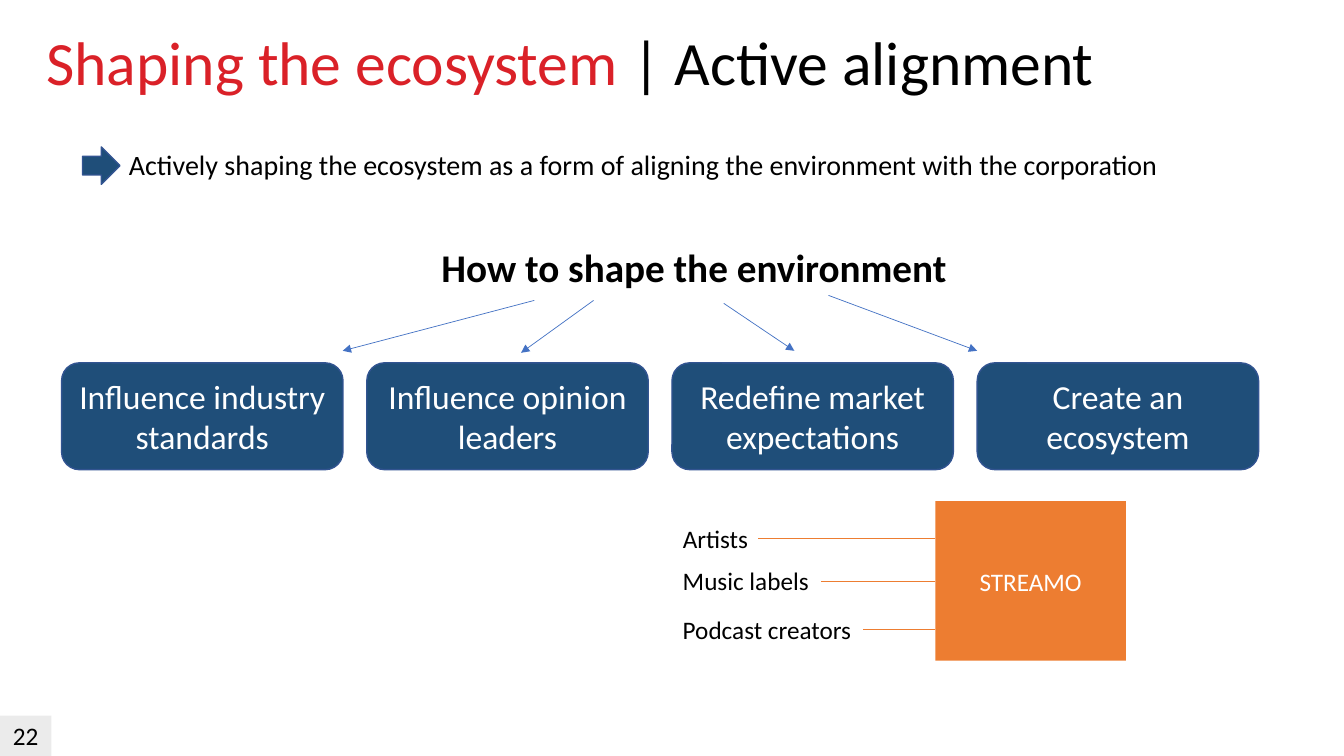
from dataclasses import dataclass

import lxml.etree
import pptx
import pptx.dml.color
import pptx.enum.shapes
import pptx.enum.text
import pptx.oxml.ns
import pptx.util

Pt = pptx.util.Pt
Shape = pptx.enum.shapes.MSO_SHAPE
Align = pptx.enum.text.PP_ALIGN
Anchor = pptx.enum.text.MSO_ANCHOR
qn = pptx.oxml.ns.qn

COLORS = {
    "red": "DA2128",
    "black": "000000",
    "white": "FFFFFF",
    "gray": "BFBFBF",
    "navy": "1F4E79",
    "outline": "325491",
    "blue": "4472C4",
    "orange": "ED7D31",
}


@dataclass(frozen=True)
class Frame:
    left: float
    top: float
    width: float
    height: float

    def lengths(self) -> list:
        return [Pt(value) for value in (self.left, self.top, self.width, self.height)]


@dataclass(frozen=True)
class Piece:
    text: str
    size: float
    color: str = "black"
    bold: bool = False


@dataclass(frozen=True)
class Action:
    text: str
    arrow_start: tuple
    arrow_end: tuple


@dataclass(frozen=True)
class Partner:
    text: str
    top: float
    width: float


ACTIONS = [
    Action("Influence industry standards", (381.6, 214.6), (244.8, 250.6)),
    Action("Influence opinion leaders", (424, 214.6), (372.2, 252)),
    Action("Redefine market expectations", (517, 216.7), (567.4, 250.6)),
    Action("Create an ecosystem", (591.8, 211), (698, 250.6)),
]
PARTNERS = [
    Partner("Artists", 370, 61.2),
    Partner("Music labels", 400.5, 105.8),
    Partner("Podcast creators", 435, 136),
]
ACTION_LEFT, ACTION_TOP, ACTION_PITCH = 44, 259.2, 218
HUB = Frame(668.2, 358, 136, 114)
HUB_MIDDLE = HUB.top + HUB.height / 2


def rgb(name: str):
    return pptx.dml.color.RGBColor.from_string(COLORS[name])


def write(box, pieces: list[Piece]):
    para = box.text_frame.paragraphs[0]
    for piece in pieces:
        span = para.add_run()
        span.text = piece.text
        span.font.name = "Calibri"
        span.font.size = Pt(piece.size)
        span.font.bold = piece.bold
        span.font.color.rgb = rgb(piece.color)
    return para


def add_text(page, frame: Frame, pieces: list[Piece], wrap: bool = False):
    box = page.shapes.add_textbox(*frame.lengths())
    box.text_frame.word_wrap = wrap
    write(box, pieces)
    return box


def add_block(page, kind, frame: Frame, fill: str, outline: str = "", pieces: list[Piece] = ()):
    block = page.shapes.add_shape(kind, *frame.lengths())
    block.shadow.inherit = False
    block.fill.solid()
    block.fill.fore_color.rgb = rgb(fill)
    if outline:
        block.line.color.rgb = rgb(outline)
        block.line.width = Pt(1)
    else:
        block.line.fill.background()
    block.text_frame.vertical_anchor = Anchor.MIDDLE
    write(block, pieces).alignment = Align.CENTER
    return block


def add_line(page, start: tuple, end: tuple, color: str):
    line = page.shapes.add_connector(
        pptx.enum.shapes.MSO_CONNECTOR.STRAIGHT, *[Pt(value) for value in start + end]
    )
    line.line.color.rgb = rgb(color)
    line.line.width = Pt(0.5)
    lxml.etree.SubElement(line._element.spPr, qn("a:effectLst"))
    return line


def add_arrow(page, start: tuple, end: tuple, color: str) -> None:
    arrow = add_line(page, start, end, color)
    outline = arrow._element.spPr.find(qn("a:ln"))
    lxml.etree.SubElement(outline, qn("a:tailEnd"), type="triangle")


def add_page_number(page) -> None:
    number = add_block(
        page, Shape.RECTANGLE, Frame(0, 511.2, 36.7, 28.8), "gray", pieces=[Piece("22", 18)]
    )
    number.text_frame.vertical_anchor = Anchor.TOP
    tint = number._element.spPr.find(qn("a:solidFill"))[0]
    lxml.etree.SubElement(tint, qn("a:alpha"), val="30000")


def add_actions(page) -> None:
    for index, action in enumerate(ACTIONS):
        frame = Frame(ACTION_LEFT + index * ACTION_PITCH, ACTION_TOP, 201, 76.3)
        pieces = [Piece(action.text, 24, "white")]
        add_block(page, Shape.ROUNDED_RECTANGLE, frame, "navy", "outline", pieces)
        add_arrow(page, action.arrow_start, action.arrow_end, "blue")


def add_partners(page) -> None:
    hub = add_block(page, Shape.RECTANGLE, HUB, "orange", pieces=[Piece("STREAMO", 18, "white")])
    for partner in PARTNERS:
        frame = Frame(480.6, partner.top, partner.width, 29)
        label = add_text(page, frame, [Piece(partner.text, 18)])
        middle = frame.top + frame.height / 2
        line = add_line(page, (HUB.left, middle), (frame.left + frame.width, middle), "orange")
        line.end_connect(label, 3)
        if middle == HUB_MIDDLE:
            line.begin_connect(hub, 1)


def main() -> None:
    deck = pptx.Presentation()
    deck.slide_width, deck.slide_height = Pt(960), Pt(540)
    page = deck.slides.add_slide(deck.slide_layouts[6])

    title = add_text(
        page,
        Frame(26, 19.4, 828, 104.4),
        [Piece("Shaping the ecosystem ", 44, "red"), Piece("| Active alignment", 44)],
        wrap=True,
    )
    title.text_frame.paragraphs[0].line_spacing = 0.9
    add_page_number(page)
    add_block(page, Shape.RIGHT_ARROW, Frame(59, 105, 26.7, 26.7), "navy", "outline")
    message = (
        "Actively shaping the ecosystem as a form of aligning "
        "the environment with the corporation"
    )
    add_text(page, Frame(85, 101.5, 756, 31.7), [Piece(message, 20)])
    heading = Piece("How to shape the environment", 28, bold=True)
    add_text(page, Frame(308.2, 170, 379.4, 41), [heading])
    add_actions(page)
    add_partners(page)
    deck.save("out.pptx")


if __name__ == "__main__":
    main()
